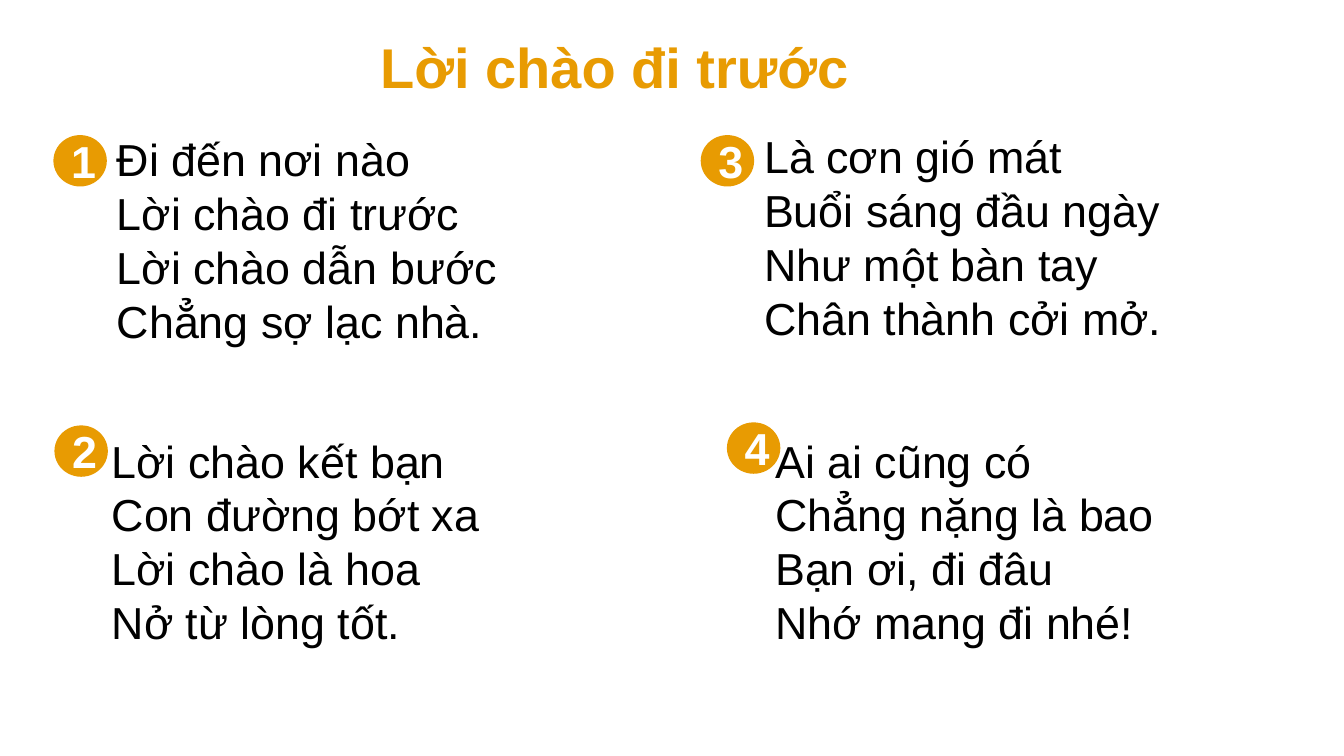
from pptx import Presentation
from pptx import util as u
from pptx.dml import color
from pptx.enum import shapes, text


def rgb(value):
    return color.RGBColor.from_string(value)


class PoemSlide:
    FONT = "Arial"
    ORANGE, BLACK, WHITE = "E89B02", "000000", "FFFFFF"
    TITLE_SIZE, BODY_SIZE = 40, 32

    def __init__(self, prs):
        self.s = prs.slides.add_slide(prs.slide_layouts[5])
        self.s.background.fill.solid()
        self.s.background.fill.fore_color.rgb = rgb(self.WHITE)

    def set_words(self, sp, words, size, hue, bold=False,
                  align=text.PP_ALIGN.LEFT, anchor=text.MSO_ANCHOR.TOP):
        tf = sp.text_frame
        tf.text = words
        tf.word_wrap = True
        tf.vertical_anchor = anchor
        for p in tf.paragraphs:
            p.alignment = align
            for r in p.runs:
                r.font.name = self.FONT
                r.font.size = u.Pt(size)
                r.font.bold = bold
                r.font.color.rgb = rgb(hue)

    def title(self, words, left, top, width, height):
        sp = self.s.shapes.title
        sp.left, sp.top = u.Inches(left), u.Inches(top)
        sp.width, sp.height = u.Inches(width), u.Inches(height)
        self.set_words(sp, words, self.TITLE_SIZE, self.ORANGE, bold=True)
        sp.text_frame.auto_size = text.MSO_AUTO_SIZE.NONE

    def stanza(self, lines, left, top, width, height=2.25):
        sp = self.s.shapes.add_textbox(u.Inches(left), u.Inches(top),
                                       u.Inches(width), u.Inches(height))
        self.set_words(sp, "\n".join(lines), self.BODY_SIZE, self.BLACK)
        sp.text_frame.auto_size = text.MSO_AUTO_SIZE.SHAPE_TO_FIT_TEXT

    def badge(self, number, left, top, width=0.53, height=0.51):
        sp = self.s.shapes.add_shape(
            shapes.MSO_SHAPE.FLOWCHART_CONNECTOR, u.Inches(left),
            u.Inches(top), u.Inches(width), u.Inches(height))
        sp.shadow.inherit = False
        sp.fill.solid()
        sp.fill.fore_color.rgb = rgb(self.ORANGE)
        sp.line.fill.background()
        self.set_words(sp, str(number), self.BODY_SIZE, self.WHITE, bold=True,
                       align=text.PP_ALIGN.CENTER,
                       anchor=text.MSO_ANCHOR.MIDDLE)


# Stanzas: lines, text box (left, top, width), badge (left, top)
STANZAS = [
    (["Đi đến nơi nào", "Lời chào đi trước",
      "Lời chào dẫn bước", "Chẳng sợ lạc nhà."],
     (1.06, 1.26, 5.14), (0.53, 1.34)),
    (["Lời chào kết bạn", "Con đường bớt xa",
      "Lời chào là hoa", "Nở từ lòng tốt."],
     (1.01, 4.25, 4.47), (0.54, 4.22)),
    (["Là cơn gió mát", "Buổi sáng đầu ngày",
      "Như một bàn tay", "Chân thành cởi mở."],
     (7.48, 1.23, 4.68), (6.95, 1.34)),
    (["Ai ai cũng có", "Chẳng nặng là bao",
      "Bạn ơi, đi đâu", "Nhớ mang đi nhé!"],
     (7.59, 4.25, 4.68), (7.21, 4.19)),
]


def main():
    prs = Presentation()
    prs.slide_width, prs.slide_height = u.Inches(13.33), u.Inches(7.5)
    poem = PoemSlide(prs)

    # Title
    poem.title("Lời chào đi trước", 3.67, 0.27, 5.06, 0.77)

    # Numbered stanzas
    for number, (lines, box, spot) in enumerate(STANZAS, start=1):
        poem.stanza(lines, *box)
        poem.badge(number, *spot)

    prs.save("out.pptx")


if __name__ == "__main__":
    main()
